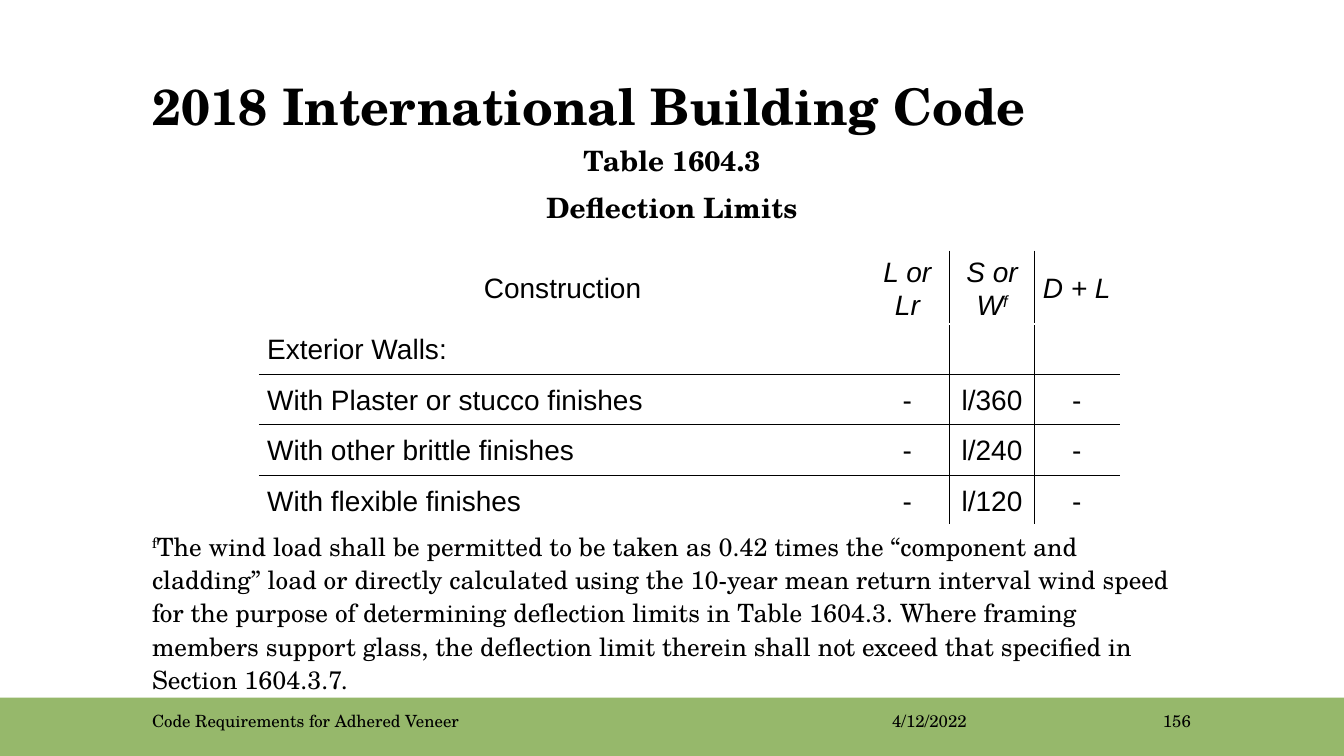
"""Build the slide on deflection limits from the 2018 International Building Code."""
from dataclasses import dataclass

from lxml.etree import SubElement
from pptx import Presentation
from pptx.dml.color import RGBColor
from pptx.enum.shapes import MSO_SHAPE as Shape
from pptx.enum.text import MSO_ANCHOR as Anchor, PP_ALIGN as Align
from pptx.oxml.ns import qn
from pptx.util import Inches, Pt

TITLE = "2018 International Building Code"
CAPTION = ["Table 1604.3", "Deflection Limits"]
LIMITS = [
    ("Construction", "L or Lr", "S or W^f^", "D + L"),
    ("Exterior Walls:", "", "", ""),
    ("With Plaster or stucco finishes", "-", "l/360", "-"),
    ("With other brittle finishes", "-", "l/240", "-"),
    ("With flexible finishes", "-", "l/120", "-"),
]
FOOTNOTE = (
    "^f^The wind load shall be permitted to be taken as 0.42 times the “component and "
    "cladding” load or directly calculated using the 10-year mean return interval wind "
    "speed for the purpose of determining deflection limits in Table 1604.3. Where framing "
    "members support glass, the deflection limit therein shall not exceed that specified "
    "in Section 1604.3.7."
)
WIDTH, HEIGHT = 13.33, 7.5
MARGIN, CONTENT_WIDTH = 1.41, 10.5
BAND_HEIGHT = 0.58
FOOTER_TOP, FOOTER_HEIGHT = 7, 0.3
FOOTERS = [
    ("Code Requirements for Adhered Veneer", MARGIN, 6.92, Align.LEFT),
    ("4/12/2022", 8.75, 1.44, Align.LEFT),
    ("156", 10.58, 1.33, Align.RIGHT),
]
TABLE_LEFT, TABLE_TOP = 2.58, 2.5
COLUMN_WIDTHS = [6, 0.84, 0.84, 0.84]
ROW_HEIGHTS = [0.53, 0.5, 0.5, 0.5, 0.5]


@dataclass(frozen=True)
class Theme:
    serif: str = "TeX Gyre Schola"
    sans: str = "Arial"
    ink: str = "000000"
    paper: str = "FFFFFF"
    band: str = "96B86B"
    title: int = 36
    table: int = 20
    note: int = 18
    footer: int = 12
    rule: float = 1
    blank_rule: float = 2.25


THEME = Theme()


def style(para, size, face=THEME.serif, bold=False, italic=False, align=Align.LEFT):
    para.alignment = align
    font = para.font
    font.name, font.size, font.bold, font.italic = face, Pt(size), bold, italic
    font.color.rgb = RGBColor.from_string(THEME.ink)


def write(para, text):
    """Add runs, raising the parts between carets."""
    for index, part in enumerate(text.split("^")):
        if part:
            span = para.add_run()
            span.text = part
            if index % 2:
                span._r.get_or_add_rPr().set("baseline", "30000")


def add_text(page, lines, left, top, width, height, size, spacing=None, anchor=Anchor.TOP, **look):
    frame = page.shapes.add_textbox(*map(Inches, (left, top, width, height))).text_frame
    frame.word_wrap, frame.vertical_anchor = True, anchor
    for index, line in enumerate(lines):
        para = frame.add_paragraph() if index else frame.paragraphs[0]
        write(para, line)
        style(para, size, **look)
        if spacing:
            para.line_spacing, para.space_after = spacing, Pt(0.35 * size)


def set_borders(cell, row, column):
    last_row, last_column = len(LIMITS) - 1, len(COLUMN_WIDTHS) - 1
    ruled = {
        "L": column > 1,
        "R": 0 < column < last_column,
        "T": row > 1,
        "B": 0 < row < last_row,
    }
    properties = cell._tc.get_or_add_tcPr()
    for side, black in ruled.items():
        width = THEME.rule if black else THEME.blank_rule
        line = SubElement(properties, qn(f"a:ln{side}"), w=str(Pt(width)))
        fill = SubElement(line, qn("a:solidFill"))
        SubElement(fill, qn("a:srgbClr"), val=THEME.ink if black else THEME.paper)


def add_limits(page):
    table = page.shapes.add_table(
        len(LIMITS), len(COLUMN_WIDTHS), Inches(TABLE_LEFT), Inches(TABLE_TOP),
        Inches(sum(COLUMN_WIDTHS)), Inches(sum(ROW_HEIGHTS))).table
    table.first_row = table.horz_banding = False
    for column, width in zip(table.columns, COLUMN_WIDTHS):
        column.width = Inches(width)
    for row, (height, values) in enumerate(zip(ROW_HEIGHTS, LIMITS)):
        table.rows[row].height = Inches(height)
        for column, value in enumerate(values):
            cell = table.cell(row, column)
            cell.margin_left = cell.margin_right = Inches(0.07)
            cell.margin_top = cell.margin_bottom = 0
            cell.vertical_anchor = Anchor.MIDDLE
            set_borders(cell, row, column)
            cell.fill.background()
            para = cell.text_frame.paragraphs[0]
            write(para, value)
            style(para, THEME.table, THEME.sans, italic=row == 0 and column > 0,
                  align=Align.LEFT if row and not column else Align.CENTER)
            para.line_spacing = 1.07


def main():
    deck = Presentation()
    deck.slide_width, deck.slide_height = Inches(WIDTH), Inches(HEIGHT)
    page = deck.slides.add_slide(deck.slide_layouts[5])

    band = page.shapes.add_shape(
        Shape.RECTANGLE, 0, Inches(HEIGHT - BAND_HEIGHT), Inches(WIDTH), Inches(BAND_HEIGHT))
    band.shadow.inherit = False
    band.fill.solid()
    band.fill.fore_color.rgb = RGBColor.from_string(THEME.band)
    band.line.fill.background()

    title = page.shapes.title
    title.left, title.top = Inches(MARGIN), Inches(0.42)
    title.width, title.height = Inches(CONTENT_WIDTH), Inches(1.25)
    frame = title.text_frame
    frame.text = TITLE
    frame.vertical_anchor = Anchor.MIDDLE
    frame.margin_top = frame.margin_bottom = 0
    style(frame.paragraphs[0], THEME.title, bold=True)

    add_text(page, [FOOTNOTE], MARGIN, 5.19, CONTENT_WIDTH, 1.56, THEME.note, spacing=1.1)
    add_text(page, CAPTION, TABLE_LEFT, 1.34, 8.17, 5.19, THEME.table, spacing=1.1,
             bold=True, align=Align.CENTER)
    for text, left, width, align in FOOTERS:
        add_text(page, [text], left, FOOTER_TOP, width, FOOTER_HEIGHT, THEME.footer,
                 anchor=Anchor.MIDDLE, align=align)
    add_limits(page)
    deck.save("out.pptx")


if __name__ == "__main__":
    main()
